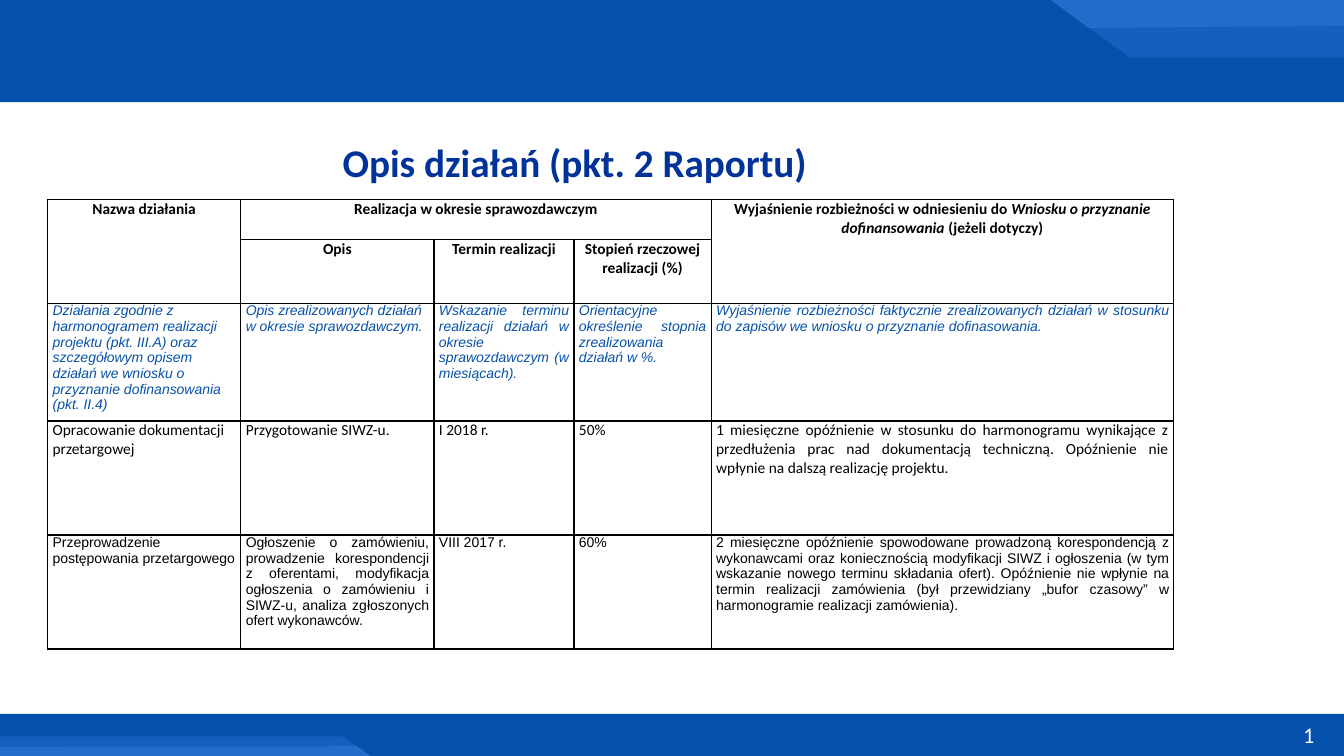
from lxml import etree
from pptx import Presentation
from pptx.dml.color import RGBColor
from pptx.enum.shapes import MSO_SHAPE
from pptx.enum.text import MSO_ANCHOR, PP_ALIGN
from pptx.oxml.ns import qn
from pptx.util import Pt

RECTANGLE = MSO_SHAPE.RECTANGLE
TOP, MIDDLE = MSO_ANCHOR.TOP, MSO_ANCHOR.MIDDLE
LEFT, CENTER, RIGHT, JUSTIFY = PP_ALIGN.LEFT, PP_ALIGN.CENTER, PP_ALIGN.RIGHT, PP_ALIGN.JUSTIFY

WIDTH, HEIGHT = 960, 540
COLORS = {
    "band": "0651AC",
    "middle": "1560BD",
    "light": "226DC9",
    "title": "003399",
    "text": "000000",
    "white": "FFFFFF",
}

COLUMN_WIDTHS = [138, 138, 100, 98, 330.5]
ROW_HEIGHTS = [28.8, 45.4, 81.4, 81.4, 81.4]
MERGES = [((0, 0), (1, 0)), ((0, 1), (0, 3)), ((0, 4), (1, 4))]
HEADERS = {
    (0, 0): [("Nazwa działania", False)],
    (0, 1): [("Realizacja w okresie sprawozdawczym", False)],
    (0, 4): [
        ("Wyjaśnienie rozbieżności w odniesieniu do ", False),
        ("Wniosku o przyznanie dofinansowania", True),
        (" (jeżeli dotyczy)", False),
    ],
    (1, 1): [("Opis", False)],
    (1, 2): [("Termin realizacji", False)],
    (1, 3): [("Stopień rzeczowej realizacji (%)", False)],
}
GUIDANCE = [
    "Działania zgodnie z harmonogramem realizacji projektu (pkt. III.A) oraz szczegółowym "
    "opisem działań we wniosku o przyznanie dofinansowania (pkt. II.4)",
    "Opis zrealizowanych działań w okresie sprawozdawczym.",
    "Wskazanie terminu realizacji działań w okresie sprawozdawczym (w miesiącach).",
    "Orientacyjne określenie stopnia zrealizowania działań w %.",
    "Wyjaśnienie rozbieżności faktycznie zrealizowanych działań w stosunku do zapisów "
    "we wniosku o przyznanie dofinasowania.",
]
DOCUMENTATION = [
    "Opracowanie dokumentacji przetargowej",
    "Przygotowanie SIWZ-u.",
    "I 2018 r.",
    "50%",
    "1 miesięczne opóźnienie w stosunku do harmonogramu wynikające z przedłużenia prac "
    "nad dokumentacją techniczną. Opóźnienie nie wpłynie na dalszą realizację projektu.",
]
TENDER = [
    "Przeprowadzenie postępowania przetargowego",
    "Ogłoszenie o zamówieniu, prowadzenie korespondencji z oferentami, modyfikacja "
    "ogłoszenia o zamówieniu i SIWZ-u, analiza zgłoszonych ofert wykonawców.",
    "VIII 2017 r.",
    "60%",
    "2 miesięczne opóźnienie spowodowane prowadzoną korespondencją z wykonawcami oraz "
    "koniecznością modyfikacji SIWZ i ogłoszenia (w tym wskazanie nowego terminu składania "
    "ofert). Opóźnienie nie wpłynie na termin realizacji zamówienia (był przewidziany "
    "„bufor czasowy” w harmonogramie realizacji zamówienia).",
]
BODY_ROWS = [
    (GUIDANCE, "Arial", 10, "band", True, 2),
    (DOCUMENTATION, "Calibri", 11, "text", False, 1),
    (TENDER, "Arial", 10, "text", False, 1),
]


def add_span(para, text, font, size, color, bold=False, italic=False):
    """Append one formatted run to a paragraph."""
    span = para.add_run()
    span.text = text
    span.font.name = font
    span.font.size = Pt(size)
    span.font.bold = bold
    span.font.italic = italic
    span.font.color.rgb = RGBColor.from_string(COLORS[color])


def paint(shape, color):
    """Give a shape a plain fill without line or shadow."""
    shape.shadow.inherit = False
    shape.fill.solid()
    shape.fill.fore_color.rgb = RGBColor.from_string(COLORS[color])
    shape.line.fill.background()


def add_band(page, box, facets):
    """Draw a full-width band and the angular facets placed relative to it."""
    left, top, width, height = box
    band = page.shapes.add_shape(RECTANGLE, Pt(left), Pt(top), Pt(width), Pt(height))
    paint(band, "band")
    for color, corners in facets:
        points = [(Pt(left + x), Pt(top + y)) for x, y in corners]
        builder = page.shapes.build_freeform(*points[0])
        builder.add_line_segments(points[1:], close=True)
        paint(builder.convert_to_shape(), color)


def add_label(page, box, text, size, color, align, anchor, bold=False):
    """Place a single line of text in the given box."""
    frame = page.shapes.add_textbox(*[Pt(value) for value in box]).text_frame
    frame.word_wrap = True
    frame.vertical_anchor = anchor
    para = frame.paragraphs[0]
    para.alignment = align
    add_span(para, text, "Calibri", size, color, bold)


def style_cell(cell):
    """Set the margins, thin black borders and empty fill of a cell."""
    cell.margin_left = cell.margin_right = Pt(3.6)
    cell.margin_top = cell.margin_bottom = Pt(0)
    properties = cell._tc.get_or_add_tcPr()
    for side in ("a:lnL", "a:lnR", "a:lnT", "a:lnB"):
        line = etree.SubElement(properties, qn(side), w=str(Pt(1)))
        fill = etree.SubElement(line, qn("a:solidFill"))
        etree.SubElement(fill, qn("a:srgbClr"), val=COLORS["text"])
    cell.fill.background()


def start_paragraph(cell, align):
    """Return the aligned first paragraph of a cell."""
    para = cell.text_frame.paragraphs[0]
    para.alignment = align
    para.space_after = Pt(6)
    return para


def add_activities(page, left, top):
    """Build the table of activities with its merged headers."""
    frame = page.shapes.add_table(
        len(ROW_HEIGHTS), len(COLUMN_WIDTHS), Pt(left), Pt(top),
        Pt(sum(COLUMN_WIDTHS)), Pt(sum(ROW_HEIGHTS)))
    table = frame.table
    table.first_row = table.horz_banding = False
    for column, width in zip(table.columns, COLUMN_WIDTHS):
        column.width = Pt(width)
    for row, height in zip(table.rows, ROW_HEIGHTS):
        row.height = Pt(height)
    for cell in table.iter_cells():
        style_cell(cell)
    for first, last in MERGES:
        table.cell(*first).merge(table.cell(*last))
    for place, spans in HEADERS.items():
        para = start_paragraph(table.cell(*place), CENTER)
        for text, italic in spans:
            add_span(para, text, "Calibri", 11, "text", True, italic)
    for row, (texts, font, size, color, italic, left_columns) in enumerate(BODY_ROWS, 2):
        for column, text in enumerate(texts):
            align = LEFT if column < left_columns else JUSTIFY
            para = start_paragraph(table.cell(row, column), align)
            add_span(para, text, font, size, color, italic=italic)


def main():
    """Create the deck with its single page."""
    deck = Presentation()
    deck.slide_width, deck.slide_height = Pt(WIDTH), Pt(HEIGHT)
    page = deck.slides.add_slide(deck.slide_layouts[6])
    add_band(page, (0, -2, WIDTH, 75), [
        ("middle", [(WIDTH, 0), (748, 0), (807, 43), (WIDTH, 43)]),
        ("light", [(WIDTH, 0), (748, 0), (777.5, 22), (WIDTH, 20.5)]),
    ])
    add_band(page, (0, 510, WIDTH, 30), [
        ("middle", [(0, 30), (264.5, 30), (245, 16), (0, 16)]),
        ("light", [(0, 30), (264.5, 30), (255, 23), (0, 23.5)]),
    ])
    add_label(page, (139.7, 95, 541.4, 41), "Opis działań (pkt. 2 Raportu)",
              28, "title", CENTER, TOP, True)
    add_label(page, (730, 510, 216, 29), "1", 16, "white", RIGHT, MIDDLE)
    add_activities(page, 34, 142.4)
    deck.save("out.pptx")


if __name__ == "__main__":
    main()
